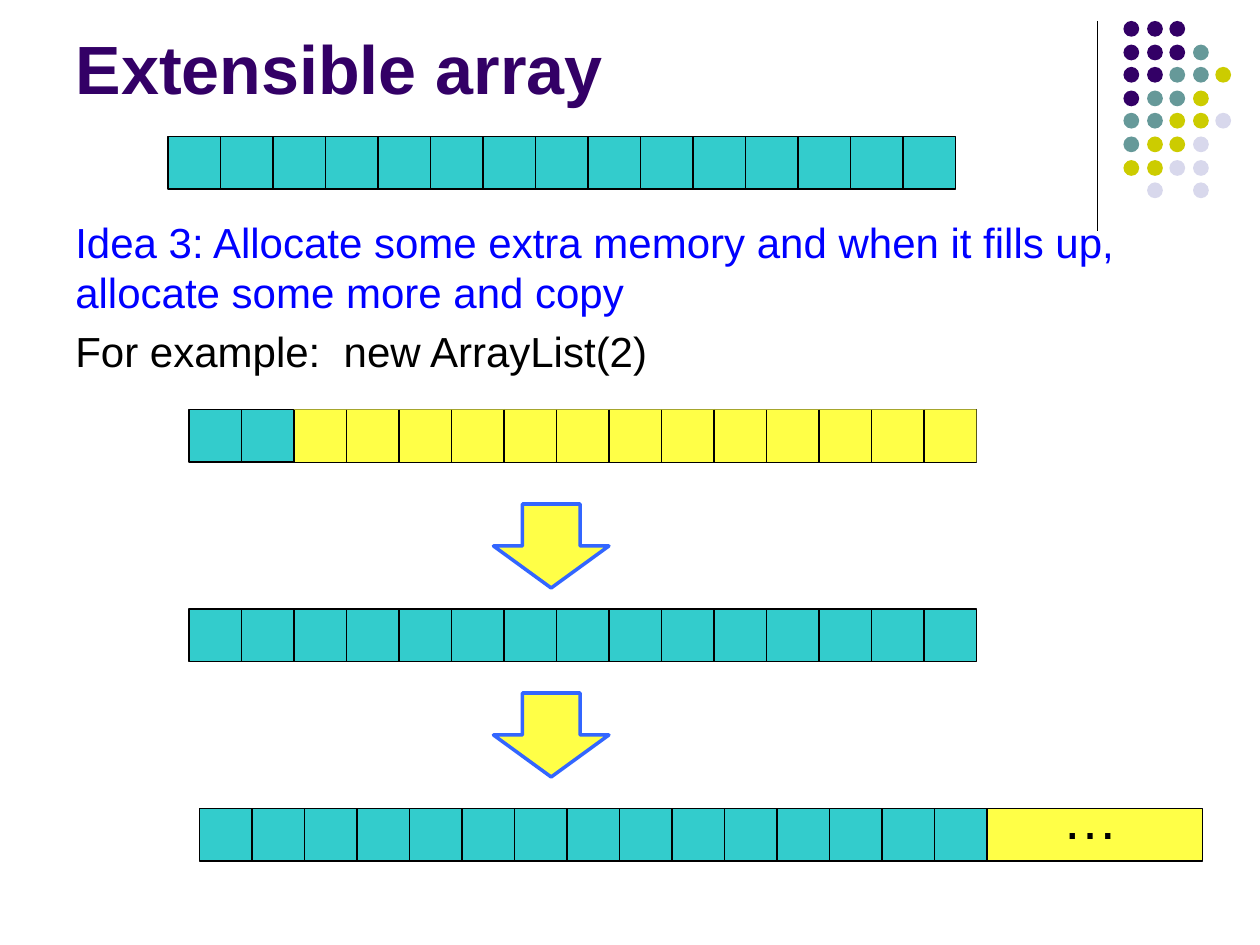
"""Build the slide on growing an extensible array."""
from dataclasses import dataclass

from lxml import etree
from pptx import Presentation
from pptx import util as u
from pptx.dml.color import RGBColor
from pptx.enum import shapes, text
from pptx.oxml.ns import qn

PX = u.Inches(1) // 96
CELL = 40
CELL_COUNT = 15
DOT_SIZE = 12
DOT_PITCH = 17.6
FONT = "Arial"
COLORS = {
    "purple": "330066",
    "teal": "669999",
    "olive": "CCCC00",
    "lavender": "D8D8EC",
    "used": "33CCCC",
    "free": "FFFF47",
    "outline": "3366FF",
    "idea": "0000FF",
    "black": "000000",
}
DOT_COLORS = {"P": "purple", "T": "teal", "O": "olive", "L": "lavender"}
DOT_ROWS = ["PPP", "PPPT", "PPTTO", "PTTO", "TTOOL", "TOOL", "OOLL", " L L"]


@dataclass(frozen=True)
class Box:
    left: int
    top: int
    width: int
    height: int

    def emu(self) -> list[int]:
        return [value * PX for value in (self.left, self.top, self.width, self.height)]


@dataclass(frozen=True)
class ArrayRow:
    left: int
    top: int
    used: int = CELL_COUNT


ARRAYS = [ArrayRow(128, 104), ArrayRow(144, 312, used=2), ArrayRow(144, 464), ArrayRow(152, 616)]
ARROWS = [Box(376, 384, 88, 64), Box(376, 528, 88, 64)]


def rgb(name: str) -> RGBColor:
    return RGBColor.from_string(COLORS[name])


def add_shape(slide, kind, box: Box, fill: str, line: str | None = None, weight: float = 0.75):
    shape = slide.shapes.add_shape(kind, *box.emu())
    shape.shadow.inherit = False
    shape.fill.solid()
    shape.fill.fore_color.rgb = rgb(fill)
    if line:
        shape.line.color.rgb = rgb(line)
        shape.line.width = u.Pt(weight)
    else:
        shape.line.fill.background()
    return shape


def add_vertical(slide, left: int, top: int, height: int) -> None:
    line = slide.shapes.add_connector(
        shapes.MSO_CONNECTOR.STRAIGHT, left * PX, top * PX, left * PX, (top + height) * PX
    )
    line.line.color.rgb = rgb("black")
    line.line.width = u.Pt(0.75)
    etree.SubElement(line._element.spPr, qn("a:effectLst"))


def add_run(paragraph, words: str, size: int, color: str, bold: bool = False) -> None:
    run = paragraph.add_run()
    run.text = words
    run.font.name = FONT
    run.font.size = u.Pt(size)
    run.font.bold = bold
    run.font.color.rgb = rgb(color)


def add_text_box(slide, box: Box):
    frame = slide.shapes.add_textbox(*box.emu()).text_frame
    frame.word_wrap = True
    return frame


def add_title(slide, words: str) -> None:
    title = slide.shapes.title
    title.left, title.top, title.width, title.height = Box(48, 12, 792, 75).emu()
    frame = title.text_frame
    frame.auto_size = text.MSO_AUTO_SIZE.NONE
    frame.vertical_anchor = text.MSO_ANCHOR.BOTTOM
    paragraph = frame.paragraphs[0]
    paragraph.alignment = text.PP_ALIGN.LEFT
    add_run(paragraph, words, 39, "purple", bold=True)


def add_body(slide) -> None:
    frame = add_text_box(slide, Box(48, 160, 872, 187))
    lines = [
        ("Idea 3: Allocate some extra memory and when it fills up, "
         "allocate some more and copy", "idea"),
        ("For example:  new ArrayList(2)", "black"),
    ]
    for index, (words, color) in enumerate(lines):
        paragraph = frame.add_paragraph() if index else frame.paragraphs[0]
        paragraph.space_before = u.Pt(5)
        add_run(paragraph, words, 24, color)


def add_dots(slide) -> None:
    for row, codes in enumerate(DOT_ROWS):
        for column, code in enumerate(codes):
            if code in DOT_COLORS:
                left, top = round(856 + column * DOT_PITCH), round(16 + row * DOT_PITCH)
                box = Box(left, top, DOT_SIZE, DOT_SIZE)
                add_shape(slide, shapes.MSO_SHAPE.OVAL, box, DOT_COLORS[code])


def add_array(slide, row: ArrayRow) -> None:
    rectangle = shapes.MSO_SHAPE.RECTANGLE
    add_shape(slide, rectangle, Box(row.left, row.top, CELL_COUNT * CELL, CELL), "used", "black")
    if row.used < CELL_COUNT:
        free = Box(row.left + row.used * CELL, row.top, (CELL_COUNT - row.used) * CELL, CELL)
        add_shape(slide, rectangle, free, "free")
    for index in range(1, CELL_COUNT):
        add_vertical(slide, row.left + index * CELL, row.top, CELL)


def main() -> None:
    presentation = Presentation()
    presentation.slide_width = 960 * PX
    presentation.slide_height = 720 * PX
    slide = presentation.slides.add_slide(presentation.slide_layouts[5])
    add_vertical(slide, 836, 16, 160)
    add_dots(slide)
    add_title(slide, "Extensible array")
    add_body(slide)
    for row in ARRAYS:
        add_array(slide, row)
    add_shape(slide, shapes.MSO_SHAPE.RECTANGLE, Box(752, 616, 164, CELL), "free", "black")
    ellipsis_frame = add_text_box(slide, Box(800, 592, 72, 61))
    add_run(ellipsis_frame.paragraphs[0], "…", 32, "black")
    for arrow in ARROWS:
        add_shape(slide, shapes.MSO_SHAPE.DOWN_ARROW, arrow, "free", "outline", 2)
    presentation.save("out.pptx")


if __name__ == "__main__":
    main()
